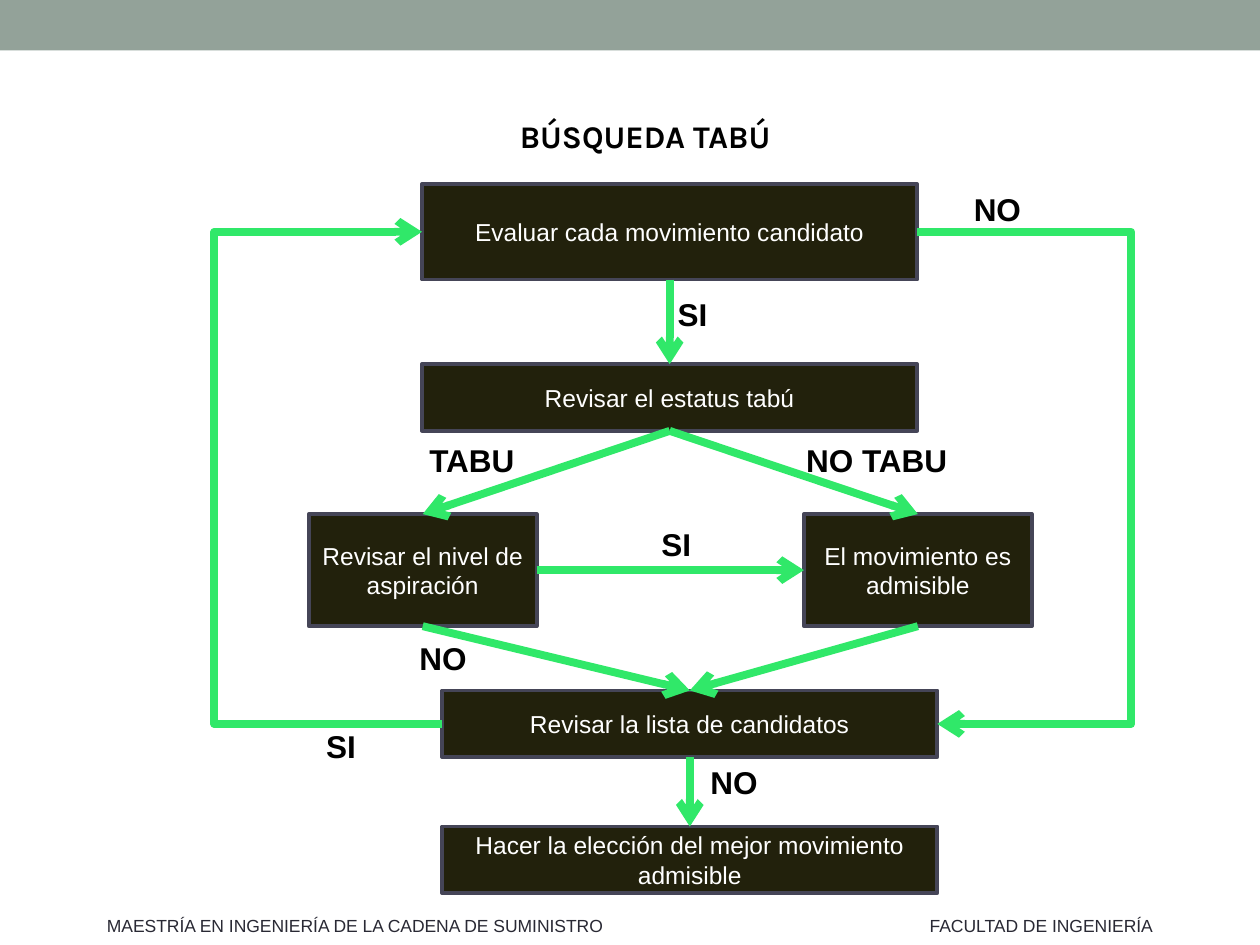
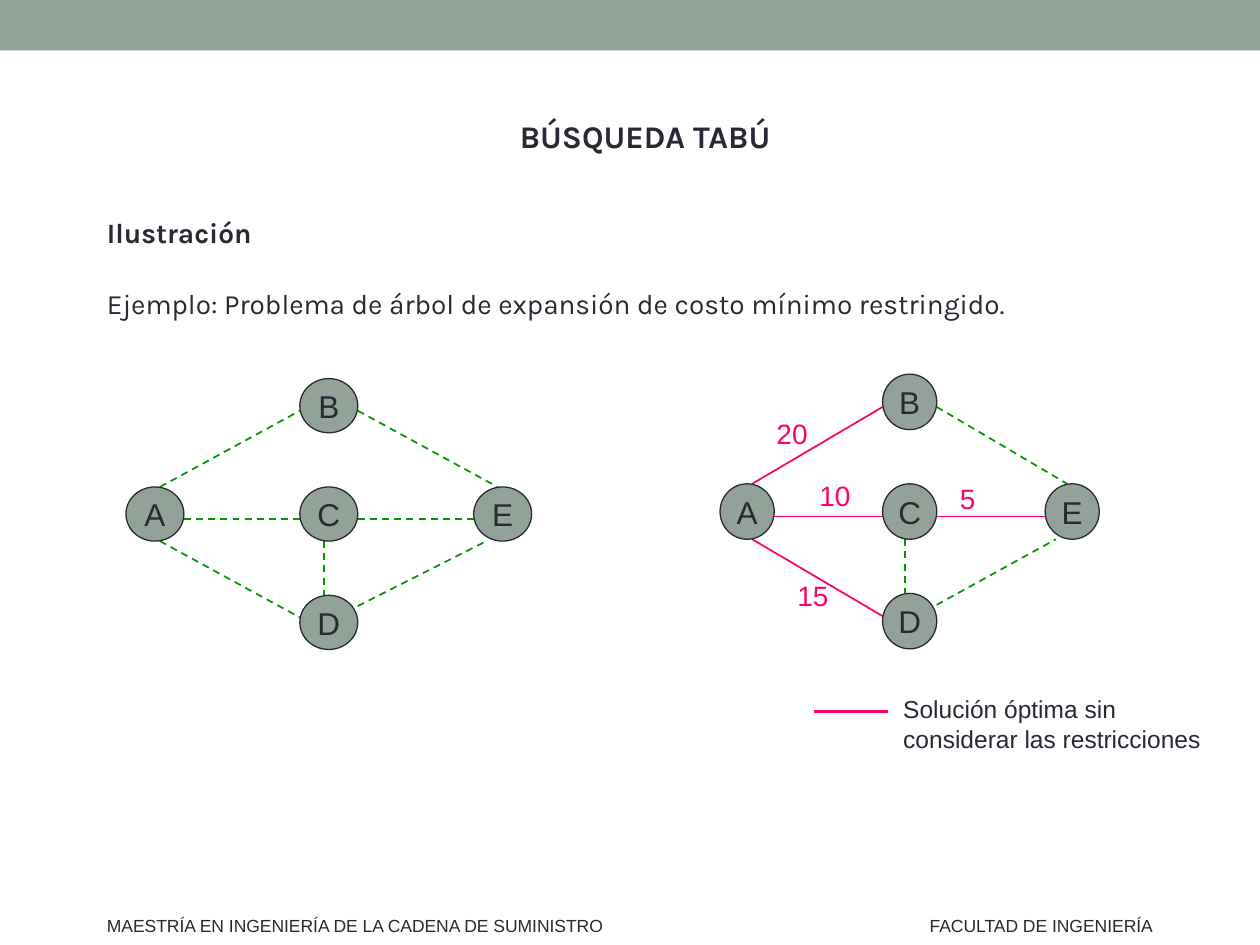
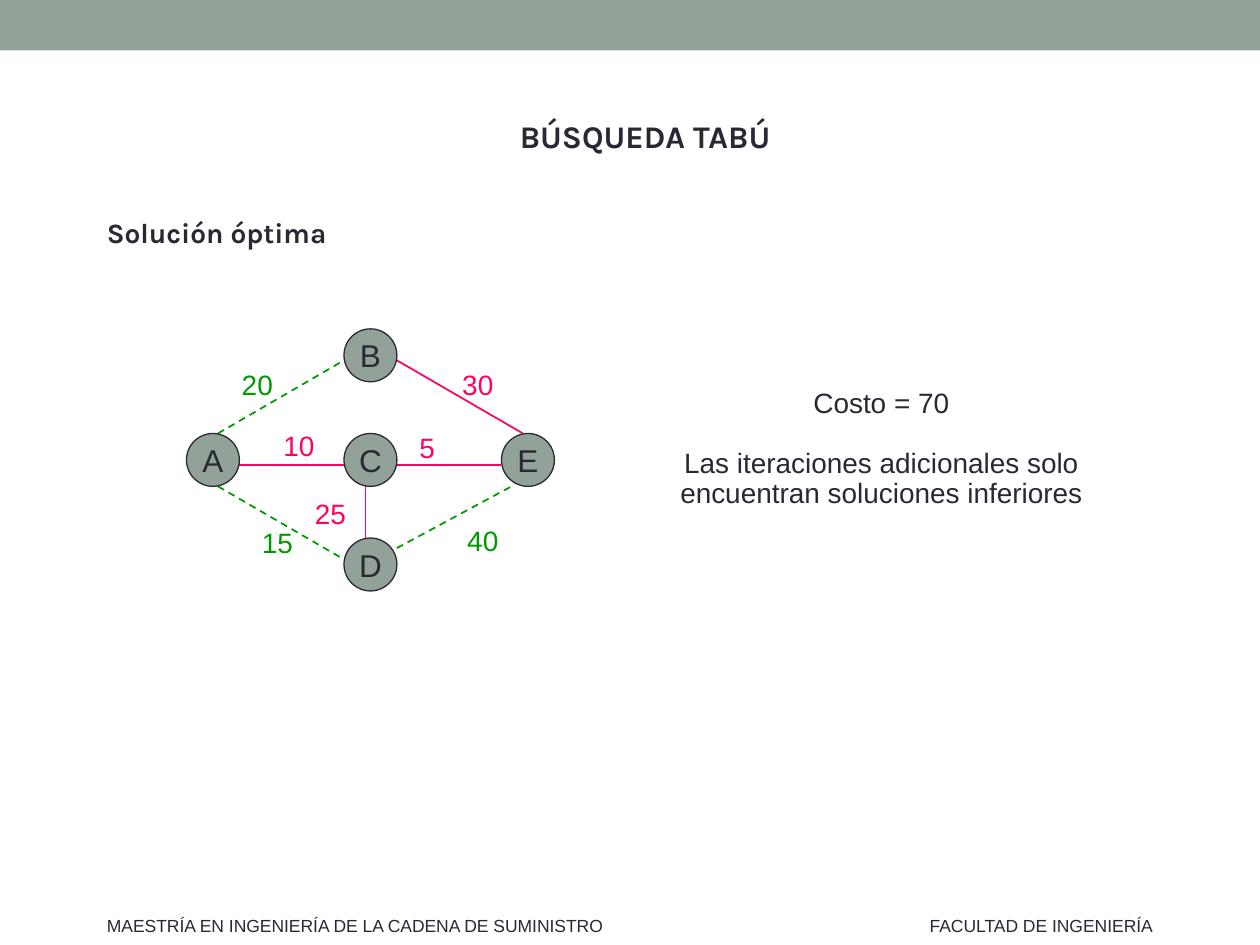
import pptx
import pptx.util
import pptx.dml.color
import pptx.enum.dml
import pptx.enum.shapes
import pptx.enum.text
import pptx.oxml
import pptx.oxml.ns
from lxml import etree

Inches, Pt = pptx.util.Inches, pptx.util.Pt
RGBColor = pptx.dml.color.RGBColor
PRESET = pptx.enum.shapes.MSO_SHAPE
CONNECTOR = pptx.enum.shapes.MSO_CONNECTOR
ALIGN = pptx.enum.text.PP_ALIGN
ANCHOR = pptx.enum.text.MSO_ANCHOR
DASH = pptx.enum.dml.MSO_LINE.DASH

# Colours and fonts
SAGE = RGBColor(0x93, 0xA2, 0x99)
INK = RGBColor(0x29, 0x29, 0x34)
BLACK = RGBColor(0, 0, 0)
WHITE = RGBColor(0xFF, 0xFF, 0xFF)
STEP_FILL = RGBColor(0x22, 0x21, 0x0C)
STEP_EDGE = RGBColor(0x45, 0x45, 0x57)
FLOW_GREEN = RGBColor(0x30, 0xE8, 0x69)
OPEN_GREEN = RGBColor(0x00, 0x99, 0x00)
CHOSEN_PINK = RGBColor(0xFF, 0x00, 0x66)
HEAD_FONT, BODY_FONT = "Karla", "Arial"

# Shared wording
TITLE = "BÚSQUEDA TABÚ"
FOOTERS = [  # text, left, width
    ("MAESTRÍA EN INGENIERÍA DE LA CADENA DE SUMINISTRO", 0.75, 4.21),
    ("FACULTAD DE INGENIERÍA", 7.28, 2.02),
]

# Flowchart: step -> (text, left, top, width, height)
STEPS = {
    "evaluar": ("Evaluar cada movimiento candidato", 3.35, 1.46, 3.93, 0.76),
    "estatus": ("Revisar el estatus tabú", 3.35, 2.89, 3.93, 0.53),
    "aspiracion": ("Revisar el nivel de aspiración", 2.45, 4.08, 1.81, 0.89),
    "admisible": ("El movimiento es admisible", 6.38, 4.08, 1.81, 0.89),
    "lista": ("Revisar la lista de candidatos", 3.51, 5.48, 3.93, 0.53),
    "eleccion": ("Hacer la elección del mejor movimiento admisible",
                 3.51, 6.56, 3.93, 0.53),
}
TOP, LEFT, BOTTOM, RIGHT = range(4)
ARROWS = [  # from step, side, to step, side, x of the detour
    ("lista", BOTTOM, "eleccion", TOP, None),
    ("aspiracion", BOTTOM, "lista", TOP, None),
    ("aspiracion", RIGHT, "admisible", LEFT, None),
    ("estatus", BOTTOM, "aspiracion", TOP, None),
    ("admisible", BOTTOM, "lista", TOP, None),
    ("estatus", BOTTOM, "admisible", TOP, None),
    ("evaluar", BOTTOM, "estatus", TOP, None),
    ("evaluar", RIGHT, "lista", RIGHT, 8.98),
    ("lista", LEFT, "evaluar", LEFT, 1.7),
]
ANSWERS = [  # text, left, top, width
    ("NO", 7.63, 1.46, 1.02), ("NO", 3.23, 5.02, 1.02),
    ("NO", 5.54, 6.01, 1.02), ("SI", 2.49, 5.72, 1.02),
    ("SI", 5.15, 4.12, 1.02), ("SI", 5.28, 2.29, 1.02),
    ("NO TABU", 6.3, 3.45, 1.54), ("TABU", 3.31, 3.45, 1.54),
]

# Network: node -> grid position around C
NODES = {"A": (-1, 0), "B": (0, -1), "C": (0, 0), "D": (0, 1), "E": (1, 0)}
# Edge -> its two ends: side of the node (x, y), shift in inches (x, y)
EDGES = {
    "AB": ((0, -1, 0.04, 0), (-1, 0, 0, 0.04)),
    "AC": ((1, 0, 0, 0.04), (-1, 0, 0, 0.04)),
    "AD": ((0, 1, 0.04, 0), (-1, 0, 0, -0.04)),
    "BE": ((1, 0, 0, 0.04), (0, -1, -0.04, 0)),
    "CD": ((0, 1, -0.04, 0), (0, -1, -0.04, 0)),
    "CE": ((1, 0, 0, 0.04), (-1, 0, 0, 0.04)),
    "DE": ((1, 0, 0, -0.13), (0, 1, -0.13, 0)),
}
COSTS = {"AB": 20, "AC": 10, "AD": 15, "BE": 30, "CD": 25, "CE": 5, "DE": 40}
# Cost label corner relative to the centre of C, for a column step of 1.25
COST_PLACES = {
    "AB": (-1.12, -0.78), "AC": (-0.79, -0.3), "AD": (-0.96, 0.47),
    "BE": (0.63, -0.78), "CD": (-0.54, 0.24), "CE": (0.29, -0.28),
    "DE": (0.67, 0.46),
}
COST_STEP = 1.25
# Networks: centre of C, step between nodes, node size, chosen and priced edges
FULL_GRAPH = dict(centre=(2.61, 4.08), step=(1.38, 0.86), size=(0.46, 0.43),
                  chosen=(), priced=())
UNRESTRICTED = dict(centre=(7.22, 4.06), step=(1.29, 0.87), size=(0.43, 0.44),
                    chosen=("AB", "AC", "AD", "CE"),
                    priced=("AB", "AC", "AD", "CE"))
OPTIMUM = dict(centre=(2.94, 3.65), step=(1.25, 0.83), size=(0.42, 0.42),
               chosen=("AC", "BE", "CD", "CE"), priced=tuple(COSTS))


def add_run(paragraph, text, size, color, font=BODY_FONT, bold=False):
    run = paragraph.add_run()
    run.text = text
    run.font.size, run.font.name, run.font.bold = Pt(size), font, bold
    run.font.color.rgb = color


def add_text(slide, lines, left, top, width, height, size, color=INK,
             bold=False, wrap=True, align=ALIGN.LEFT, spacing=1.0, gap=0):
    box = slide.shapes.add_textbox(*map(Inches, (left, top, width, height)))
    frame = box.text_frame
    frame.word_wrap = wrap
    for number, line in enumerate(lines):
        paragraph = frame.add_paragraph() if number else frame.paragraphs[0]
        paragraph.alignment, paragraph.line_spacing = align, spacing
        if number:
            paragraph.space_before = Pt(gap)
        add_run(paragraph, line, size, color, bold=bold)


def add_block(slide, preset, left, top, width, height, fill,
              edge=None, edge_width=0.75):
    block = slide.shapes.add_shape(
        preset, *map(Inches, (left, top, width, height)))
    block.shadow.inherit = False
    block.fill.solid()
    block.fill.fore_color.rgb = fill
    if edge is None:
        block.line.fill.background()
    else:
        block.line.color.rgb = edge
        block.line.width = Pt(edge_width)
    return block


def label_block(block, text, size, color):
    frame = block.text_frame
    frame.word_wrap = True
    frame.vertical_anchor = ANCHOR.MIDDLE
    frame.paragraphs[0].alignment = ALIGN.CENTER
    add_run(frame.paragraphs[0], text, size, color)


def add_line(slide, start, end, color, width, kind=CONNECTOR.STRAIGHT):
    line = slide.shapes.add_connector(kind, *map(Inches, (*start, *end)))
    line.line.color.rgb = color
    line.line.width = Pt(width)
    etree.SubElement(line._element.spPr, pptx.oxml.ns.qn("a:effectLst"))
    return line


def add_page(prs, title_color=INK, heading=None, sentence=None):
    """Blank slide with the band, the title text and the footers."""
    slide = prs.slides.add_slide(prs.slide_layouts[6])
    add_block(slide, PRESET.RECTANGLE, 0, 0, 10, 0.4, SAGE)
    body = slide.shapes.add_textbox(*map(Inches, (0.75, 0.76, 8.74, 6.02)))
    frame = body.text_frame
    frame.word_wrap = True
    title = frame.paragraphs[0]
    title.alignment, title.line_spacing = ALIGN.CENTER, 1.4
    add_run(title, TITLE, 18, title_color, HEAD_FONT, True)
    for text, before, bold in ((heading, 25, True), (sentence, 12, False)):
        if text:
            paragraph = frame.add_paragraph()
            paragraph.line_spacing = 1.5
            paragraph.space_before = Pt(before)
            add_run(paragraph, text, 16, INK, HEAD_FONT, bold)
    for text, left, width in FOOTERS:
        add_text(slide, [text], left, 7.21, width, 0.27, 10, wrap=False)
    return slide


def side_point(step, side):
    _, left, top, width, height = STEPS[step]
    fx, fy = {TOP: (0.5, 0), LEFT: (0, 0.5),
              BOTTOM: (0.5, 1), RIGHT: (1, 0.5)}[side]
    return left + fx * width, top + fy * height


def draw_flowchart(slide):
    blocks = {}
    for step, (text, *place) in STEPS.items():
        blocks[step] = add_block(slide, PRESET.RECTANGLE, *place,
                                 STEP_FILL, STEP_EDGE, 2.08)
        label_block(blocks[step], text, 14, WHITE)
    for source, out_side, target, in_side, detour in ARROWS:
        start, end = side_point(source, out_side), side_point(target, in_side)
        kind = CONNECTOR.STRAIGHT if detour is None else CONNECTOR.ELBOW
        arrow = add_line(slide, start, end, FLOW_GREEN, 4.5, kind)
        arrow.begin_connect(blocks[source], out_side)
        arrow.end_connect(blocks[target], in_side)
        etree.SubElement(arrow.line._get_or_add_ln(),
                         pptx.oxml.ns.qn("a:tailEnd"), type="arrow")
        if detour is not None:
            bend = round((detour - start[0]) / (end[0] - start[0]) * 100000)
            guides = arrow._element.spPr.prstGeom.get_or_add_avLst()
            etree.SubElement(guides, pptx.oxml.ns.qn("a:gd"),
                             name="adj1", fmla=f"val {bend}")
    for text, left, top, width in ANSWERS:
        add_text(slide, [text], left, top, width, 0.4, 18, BLACK, bold=True)


def draw_network(slide, centre, step, size, chosen, priced):
    def node_centre(node):
        return [c + g * s for c, g, s in zip(centre, NODES[node], step)]

    def edge_end(node, end):
        x, y = node_centre(node)
        side_x, side_y, shift_x, shift_y = end
        return (x + side_x * size[0] / 2 + shift_x,
                y + side_y * size[1] / 2 + shift_y)

    # Edges
    for edge, ends in EDGES.items():
        color = CHOSEN_PINK if edge in chosen else OPEN_GREEN
        line = add_line(slide, *map(edge_end, edge, ends), color, 1)
        if edge not in chosen:
            line.line.dash_style = DASH
    # Nodes
    for node in NODES:
        x, y = node_centre(node)
        circle = add_block(slide, PRESET.OVAL, x - size[0] / 2,
                           y - size[1] / 2, *size, SAGE, INK)
        frame = circle.text_frame
        frame.margin_left = frame.margin_right = 0
        frame.margin_top = frame.margin_bottom = 0
        label_block(circle, node, 18, INK)
    # Costs
    scale = step[0] / COST_STEP
    for edge in priced:
        left, top = [c + scale * p for c, p in zip(centre, COST_PLACES[edge])]
        color = CHOSEN_PINK if edge in chosen else OPEN_GREEN
        add_text(slide, [str(COSTS[edge])], left, top, 0.58, 0.37, 16, color)


def main():
    prs = pptx.Presentation()
    prs.slide_width, prs.slide_height = Inches(10), Inches(7.5)

    # Flowchart of the search
    draw_flowchart(add_page(prs, BLACK))

    # Example problem
    example = add_page(
        prs, heading="Ilustración",
        sentence="Ejemplo: Problema de árbol de expansión de costo mínimo "
                 "restringido.")
    draw_network(example, **FULL_GRAPH)
    draw_network(example, **UNRESTRICTED)
    add_line(example, (6.46, 5.65), (7.05, 5.65), CHOSEN_PINK, 1.75)
    add_text(example, ["Solución óptima sin", "considerar las restricciones"],
             7.07, 5.46, 2.65, 0.57, 14)

    # Best solution
    solution = add_page(prs, heading="Solución óptima")
    draw_network(solution, **OPTIMUM)
    add_text(solution,
             ["Costo = 70", "Las iteraciones adicionales solo encuentran "
                            "soluciones inferiores"],
             5.16, 3.04, 3.67, 1.07, 16, align=ALIGN.CENTER,
             spacing=0.9, gap=17)

    prs.save("out.pptx")


if __name__ == "__main__":
    main()
